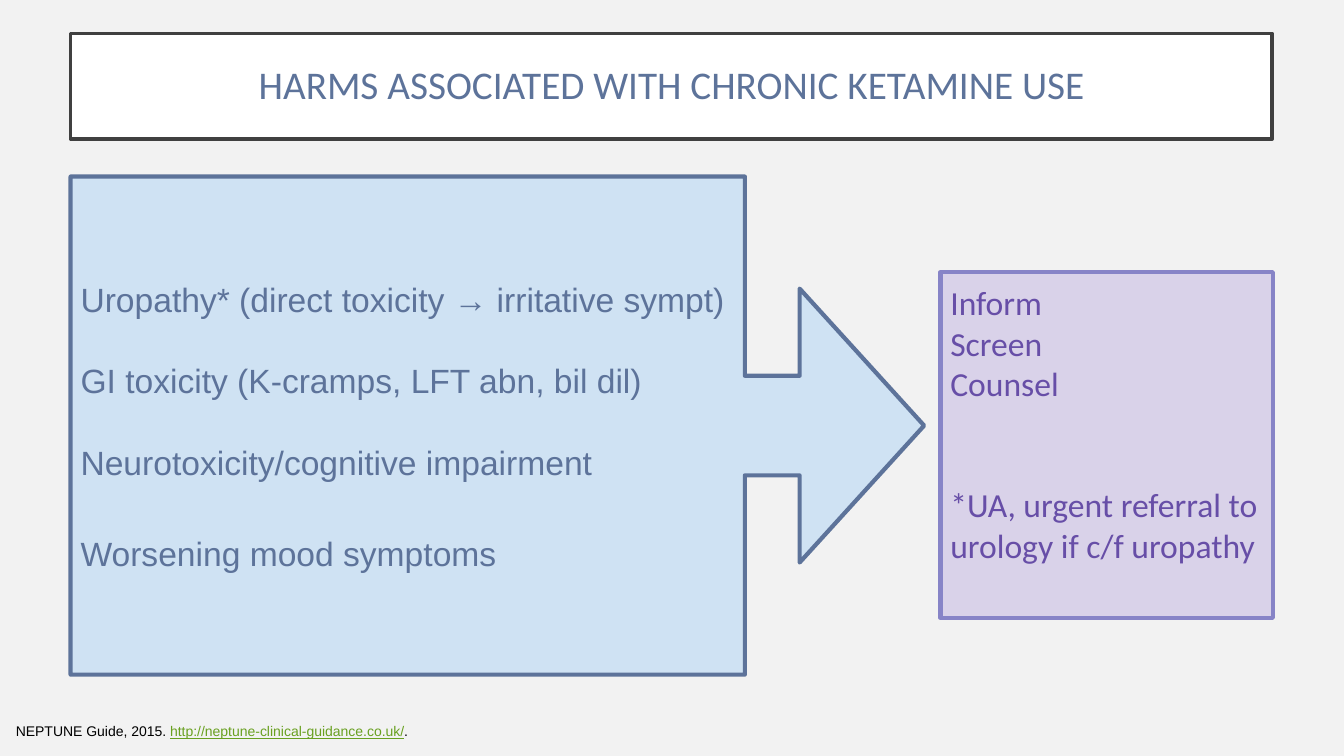
from dataclasses import dataclass

from pptx import Presentation
from pptx.dml.color import RGBColor
from pptx.enum.shapes import MSO_SHAPE
from pptx.enum.text import MSO_ANCHOR, PP_ALIGN
from pptx.util import Cm, Pt


@dataclass(frozen=True)
class Theme:
    back: str = "F2F2F2"
    white: str = "FFFFFF"
    edge: str = "404040"
    blue: str = "5D739A"
    sky: str = "CFE2F3"
    plum: str = "674EA7"
    lilac: str = "D9D2E9"
    rim: str = "8784C7"
    black: str = "000000"
    green: str = "69A020"
    sans: str = "Arial"
    head: str = "Calibri"
    title: int = 28
    body: int = 24
    note: int = 10


THEME = Theme()
LEFT = 1.78


def color(code):
    return RGBColor.from_string(code)


def write(shape, lines, *, font, size, ink, align=PP_ALIGN.LEFT,
          anchor=MSO_ANCHOR.TOP, inset=0.25, pitch=1.0):
    """Fill a shape from (space before, runs); a run is (text, ink or None, underline)."""
    frame = shape.text_frame
    frame.word_wrap = True
    frame.vertical_anchor = anchor
    frame.margin_left = frame.margin_right = Cm(inset)
    frame.margin_top = frame.margin_bottom = Cm(inset)
    for i, (gap, runs) in enumerate(lines):
        para = frame.add_paragraph() if i else frame.paragraphs[0]
        para.alignment = align
        para.line_spacing = pitch
        para.space_before = Pt(gap)
        for text, tint, under in runs:
            run = para.add_run()
            run.text = text
            run.font.name = font
            run.font.size = Pt(size)
            run.font.underline = under
            run.font.color.rgb = color(tint or ink)


def plain(text, gap=0):
    return gap, [(text, None, False)]


def panel(slide, kind, box, fill, line, width):
    shape = slide.shapes.add_shape(kind, *map(Cm, box))
    shape.shadow.inherit = False
    shape.fill.solid()
    shape.fill.fore_color.rgb = color(fill)
    shape.line.color.rgb = color(line)
    shape.line.width = Pt(width)
    return shape


def add_title(slide):
    title = panel(slide, MSO_SHAPE.RECTANGLE, (LEFT, 0.84, 30.28, 2.67),
                  THEME.white, THEME.edge, 2.5)
    write(title, [plain("HARMS ASSOCIATED WITH CHRONIC KETAMINE USE")],
          font=THEME.head, size=THEME.title, ink=THEME.blue, inset=0.51,
          align=PP_ALIGN.CENTER, anchor=MSO_ANCHOR.MIDDLE, pitch=0.9)


def add_source(slide):
    box = slide.shapes.add_textbox(*map(Cm, (0.15, 17.91, 13.13, 0.94)))
    runs = [("NEPTUNE Guide, 2015. ", None, False),
            ("http://neptune-clinical-guidance.co.uk/", THEME.green, True),
            (".", None, False)]
    write(box, [(0, runs)], font=THEME.sans, size=THEME.note,
          ink=THEME.black, pitch=1.15)


def add_steps(slide):
    steps = panel(slide, MSO_SHAPE.RECTANGLE, (23.7, 6.86, 8.38, 8.71),
                  THEME.lilac, THEME.rim, 3)
    lines = [plain(word) for word in ("Inform", "Screen", "Counsel")]
    lines.append(plain("*UA, urgent referral to urology if c/f uropathy", 58))
    write(steps, lines, font=THEME.head, size=THEME.body, ink=THEME.plum)


def add_harms(slide):
    harms = panel(slide, MSO_SHAPE.RIGHT_ARROW_CALLOUT,
                  (LEFT, 4.45, 21.51, 12.55), THEME.sky, THEME.blue, 3)
    for i, ratio in enumerate((0.2, 0.275, 0.25, 0.79)):
        harms.adjustments[i] = ratio
    lines = [plain("Uropathy* (direct toxicity → irritative sympt)"),
             plain("GI toxicity (K-cramps, LFT abn, bil dil)", 29.5),
             plain("Neurotoxicity/cognitive impairment", 29.5),
             plain("Worsening mood symptoms", 36)]
    write(harms, lines, font=THEME.sans, size=THEME.body, ink=THEME.blue,
          anchor=MSO_ANCHOR.MIDDLE)


def main():
    deck = Presentation()
    deck.slide_width, deck.slide_height = Cm(33.87), Cm(19.05)
    slide = deck.slides.add_slide(deck.slide_layouts[6])
    slide.background.fill.solid()
    slide.background.fill.fore_color.rgb = color(THEME.back)
    add_title(slide)
    add_source(slide)
    add_steps(slide)
    add_harms(slide)
    deck.save("out.pptx")


if __name__ == "__main__":
    main()
